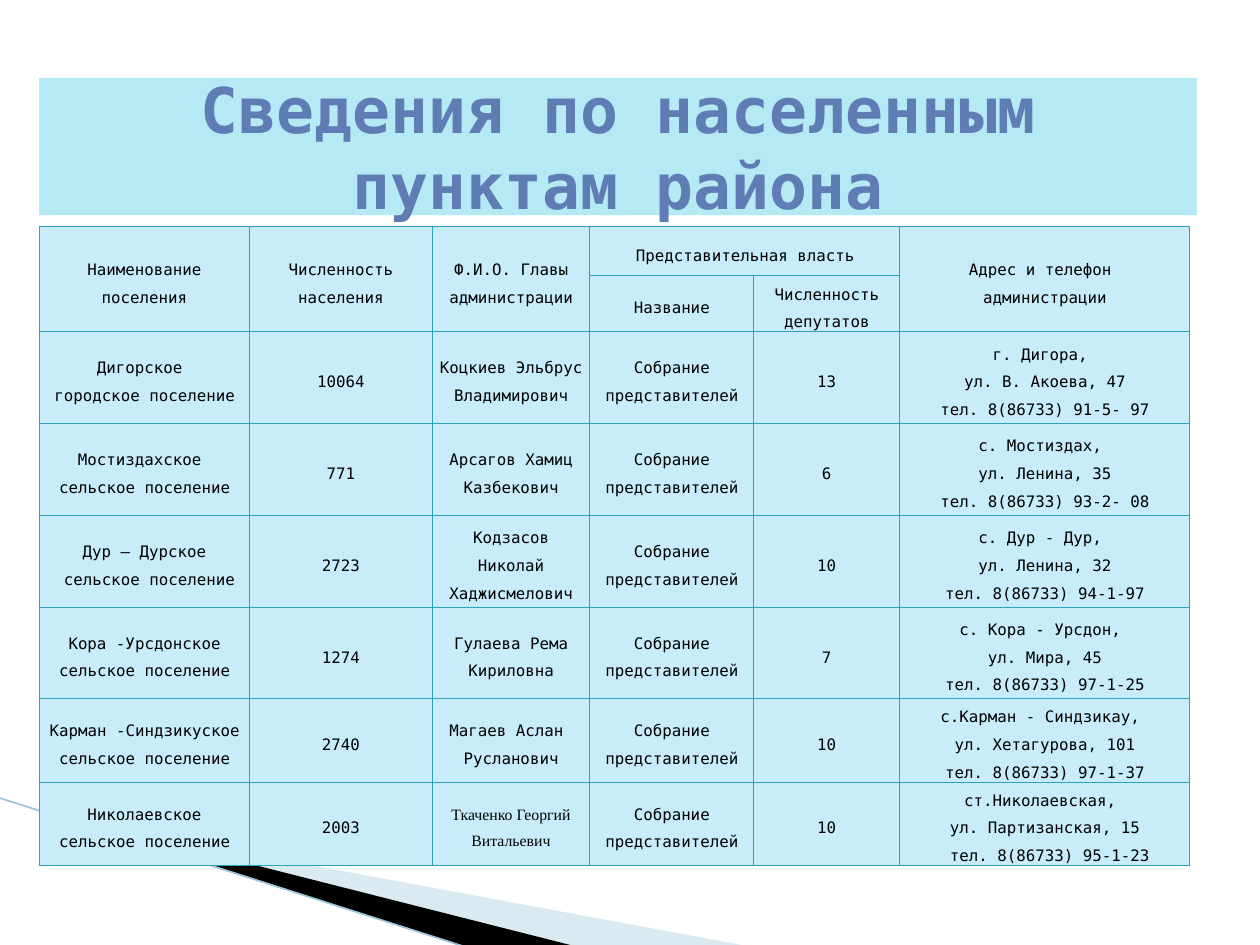
from lxml import etree
from pptx import Presentation
from pptx.dml.color import RGBColor
from pptx.enum.shapes import MSO_CONNECTOR, MSO_SHAPE
from pptx.enum.text import MSO_ANCHOR, PP_ALIGN
from pptx.oxml import parse_xml
from pptx.oxml.ns import nsdecls, qn
from pptx.util import Cm, Pt

STRAIGHT = MSO_CONNECTOR.STRAIGHT
RECTANGLE = MSO_SHAPE.RECTANGLE
MIDDLE = MSO_ANCHOR.MIDDLE
CENTER = PP_ALIGN.CENTER
MONO = "DejaVu Sans Mono"
SERIF = "Times New Roman"


def set_color(color_format, value):
    color_format.rgb = RGBColor.from_string(value)


def write_text(text_frame, text, size, color="000000", font=MONO, bold=False, spacing=1.0):
    text_frame.word_wrap = True
    text_frame.text = text
    for paragraph in text_frame.paragraphs:
        paragraph.alignment = CENTER
        paragraph.line_spacing = spacing
        for run in paragraph.runs:
            run.font.size = Pt(size)
            run.font.name = font
            run.font.bold = bold
            set_color(run.font.color, color)


presentation = Presentation()
presentation.slide_width = Cm(25.4)
presentation.slide_height = Cm(19.05)
slide = presentation.slides.add_slide(presentation.slide_layouts[6])

wedges = [
    ("A0CBDC", 40, [(1.4, 16.54), (15.11, 19.08), (11.58, 19.08), (1.4, 16.51)]),
    ("000000", 100, [(1.35, 16.48), (11.61, 19.08), (9.45, 19.1), (1.37, 16.51)]),
]
for color, opacity, points in wedges:
    corners = [(Cm(x), Cm(y)) for x, y in points]
    builder = slide.shapes.build_freeform(*corners[0])
    builder.add_line_segments(corners[1:], close=True)
    wedge = builder.convert_to_shape()
    wedge.shadow.inherit = False
    wedge.line.fill.background()
    wedge.fill.solid()
    set_color(wedge.fill.fore_color, color)
    if opacity < 100:
        color_element = wedge.fill._xPr.find(qn("a:solidFill"))[0]
        etree.SubElement(color_element, qn("a:alpha"), val=str(opacity * 1000))

edge = slide.shapes.add_connector(STRAIGHT, Cm(-0.03), Cm(16.08), Cm(9.42), Cm(19.1))
edge.line.width = Pt(0.95)
set_color(edge.line.color, "97C5D8")
etree.SubElement(edge._element.spPr, qn("a:effectLst"))

bands = [
    ("B5E9F4", (0.79, 1.57, 23.34, 2.77), "Сведения по населенным пунктам района"),
    ("FFFFFF", (0, 0, 25.4, 1.27), ""),
]
for color, box, text in bands:
    band = slide.shapes.add_shape(RECTANGLE, *[Cm(length) for length in box])
    band.shadow.inherit = False
    band.line.fill.background()
    band.fill.solid()
    set_color(band.fill.fore_color, color)
    if text:
        band.text_frame.vertical_anchor = MIDDLE
        write_text(band.text_frame, text, 36, color="5F7CB4", bold=True)

council = "Собрание\nпредставителей"
rows = [
    ["Наименование\nпоселения", "Численность населения", "Ф.И.О. Главы администрации",
     "Представительная власть", "", "Адрес и телефон \nадминистрации"],
    ["", "", "", "Название", "Численность депутатов", ""],
    ["Дигорское \nгородское поселение", "10064", "Коцкиев Эльбрус Владимирович",
     council, "13", "г. Дигора, \nул. В. Акоева, 47\nтел. 8(86733) 91-5- 97"],
    ["Мостиздахское \nсельское поселение", "771", "Арсагов Хамиц Казбекович",
     council, "6", "с. Мостиздах, \nул. Ленина, 35\nтел. 8(86733) 93-2- 08"],
    ["Дур – Дурское\n сельское поселение", "2723", "Кодзасов Николай Хаджисмелович",
     council, "10", "с. Дур - Дур, \nул. Ленина, 32\nтел. 8(86733) 94-1-97"],
    ["Кора -Урсдонское сельское поселение", "1274", "Гулаева Рема Кириловна",
     council, "7", "с. Кора - Урсдон, \nул. Мира, 45\nтел. 8(86733) 97-1-25"],
    ["Карман -Синдзикуское сельское поселение", "2740", "Магаев Аслан \nРусланович",
     council, "10", "с.Карман - Синдзикау, \nул. Хетагурова, 101\nтел. 8(86733) 97-1-37"],
    ["Николаевское\nсельское поселение", "2003", "Ткаченко Георгий Витальевич",
     council, "10", "ст.Николаевская, \nул. Партизанская, 15\n тел. 8(86733) 95-1-23"],
]
column_widths = [4.24, 3.68, 3.18, 3.3, 2.95, 5.84]
row_heights = [0.99, 1.13] + [1.85] * 4 + [1.68] * 2

table_frame = slide.shapes.add_table(
    len(rows), len(column_widths), Cm(0.79), Cm(4.57),
    Cm(sum(column_widths)), Cm(sum(row_heights)))
table = table_frame.table
for column, width in zip(table.columns, column_widths):
    column.width = Cm(width)
for row, height in zip(table.rows, row_heights):
    row.height = Cm(height)

for row_index, texts in enumerate(rows):
    for column_index, text in enumerate(texts):
        cell = table.cell(row_index, column_index)
        cell.vertical_anchor = MIDDLE
        cell.margin_left = cell.margin_right = Cm(0.08)
        cell.margin_top = cell.margin_bottom = 0
        cell.fill.solid()
        set_color(cell.fill.fore_color, "C8ECFA")
        font = SERIF if text.startswith("Ткаченко") else MONO
        write_text(cell.text_frame, text, 9, font=font, spacing=1.5)
        properties = cell._tc.get_or_add_tcPr()
        for position, side in enumerate(("lnL", "lnR", "lnT", "lnB")):
            properties.insert(position, parse_xml(
                f'<a:{side} {nsdecls("a")} w="9525"><a:solidFill>'
                f'<a:srgbClr val="2DA2BF"/></a:solidFill></a:{side}>'))

for column_index in (0, 1, 2, 5):
    table.cell(0, column_index).merge(table.cell(1, column_index))
table.cell(0, 3).merge(table.cell(0, 4))

presentation.save("out.pptx")
